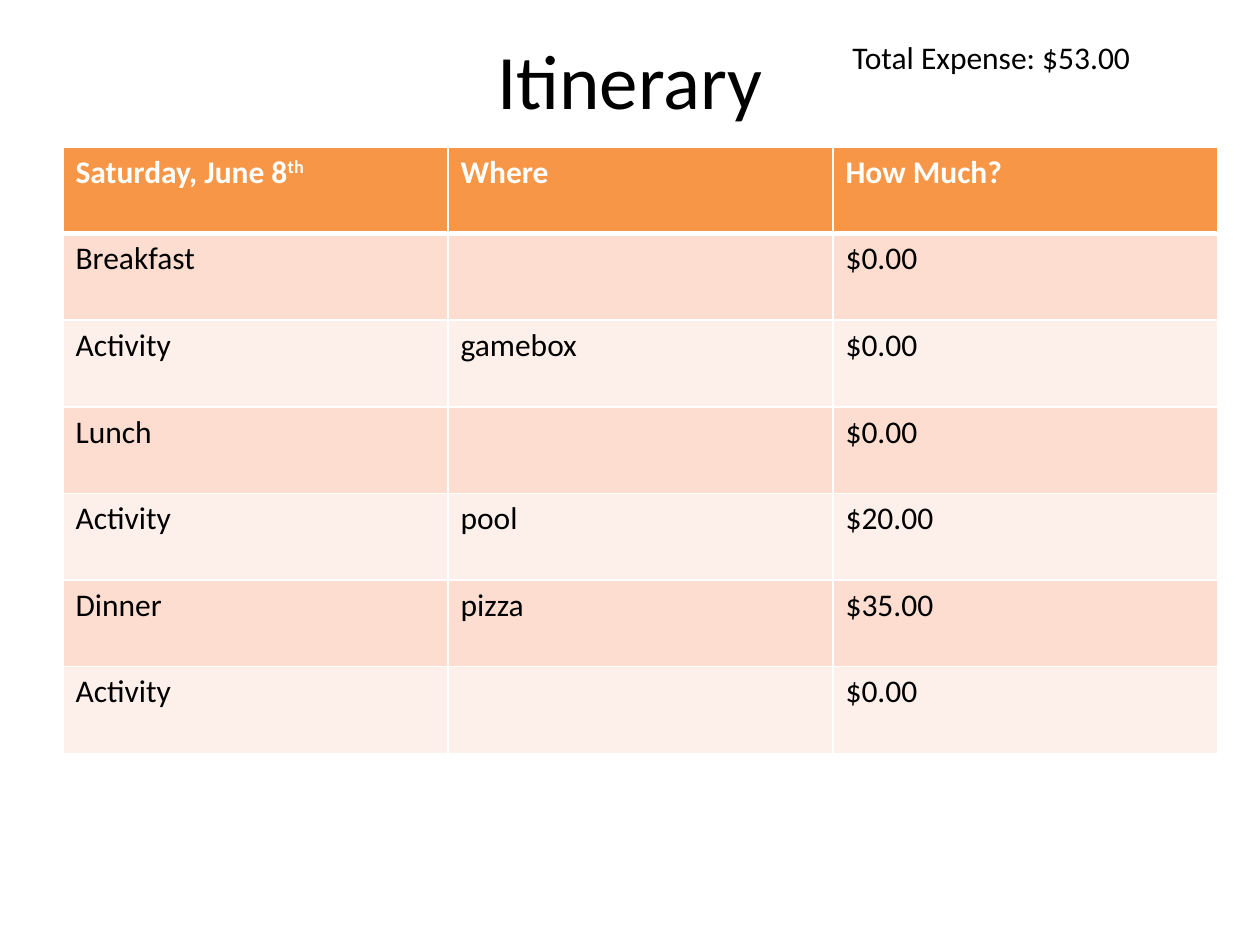
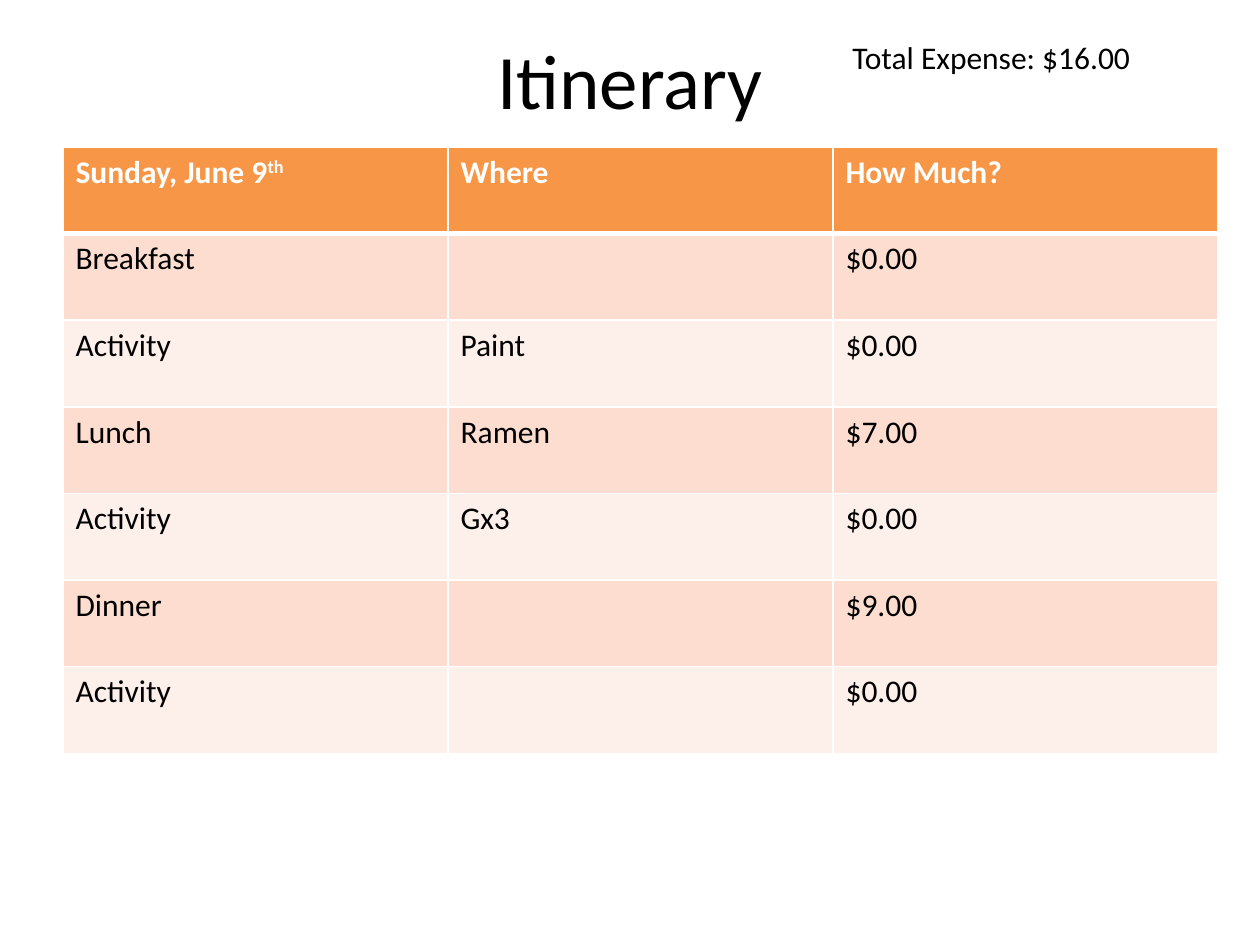
import pptx
import pptx.dml.color
import pptx.enum.text
import pptx.oxml
import pptx.oxml.ns
import pptx.util

SCALE = 6350
ALIGN = pptx.enum.text.PP_ALIGN
ANCHOR = pptx.enum.text.MSO_ANCHOR

DAYS = [
    ("Saturday, June 8", "$53.00", [
        ("Breakfast", "", "$0.00"),
        ("Activity", "gamebox", "$0.00"),
        ("Lunch", "", "$0.00"),
        ("Activity", "pool", "$20.00"),
        ("Dinner", "pizza", "$35.00"),
        ("Activity", "", "$0.00"),
    ]),
    ("Sunday, June 9", "$16.00", [
        ("Breakfast", "", "$0.00"),
        ("Activity", "Paint", "$0.00"),
        ("Lunch", "Ramen", "$7.00"),
        ("Activity", "Gx3", "$0.00"),
        ("Dinner", "", "$9.00"),
        ("Activity", "", "$0.00"),
    ]),
]


def px(*nums):
    return [pptx.util.Emu(num * SCALE) for num in nums]


def color(code):
    return pptx.dml.color.RGBColor.from_string(code)


class Deck:
    font = "Calibri"
    ink = "000000"
    paper = "FFFFFF"
    head = "F79646"
    bands = ("FCDDCF", "FDEFE9")

    def __init__(self):
        self.prs = pptx.Presentation()
        self.prs.slide_width, self.prs.slide_height = px(1440, 1080)
        self.slide = None

    def page(self):
        self.slide = self.prs.slides.add_slide(self.prs.slide_layouts[6])
        fill = self.slide.background.fill
        fill.solid()
        fill.fore_color.rgb = color(self.paper)

    def run(self, para, text, size=18, tint=ink, bold=False, base=0):
        run = para.add_run()
        run.text = text
        run.font.name = self.font
        run.font.size = pptx.util.Pt(size)
        run.font.bold = bold
        run.font.color.rgb = color(tint)
        if base:
            run._r.get_or_add_rPr().set("baseline", str(base * 1000))

    def text(self, box, text, size=18, align=ALIGN.LEFT, anchor=ANCHOR.TOP):
        frame = self.slide.shapes.add_textbox(*px(*box)).text_frame
        frame.word_wrap = True
        frame.vertical_anchor = anchor
        para = frame.paragraphs[0]
        para.alignment = align
        self.run(para, text, size)

    def border(self, cell, top, bottom):
        props = cell._tc.get_or_add_tcPr()
        for side, width in zip("LRTB", (1, 1, top, bottom)):
            props.append(pptx.oxml.parse_xml(
                f'<a:ln{side} {pptx.oxml.ns.nsdecls("a")} w="{width * 12700}">'
                f'<a:solidFill><a:srgbClr val="{self.paper}"/></a:solidFill>'
                f'</a:ln{side}>'))

    def cell(self, cell, row, runs):
        self.border(cell, 3 if row == 1 else 1, 3 if row == 0 else 1)
        cell.fill.solid()
        fill = self.bands[(row - 1) % 2] if row else self.head
        cell.fill.fore_color.rgb = color(fill)
        tint = self.ink if row else self.paper
        for text, base in runs:
            self.run(cell.text_frame.paragraphs[0], text, tint=tint,
                     bold=row == 0, base=base)

    def table(self, left, top, wide, high, rows):
        count, cols = len(rows), len(rows[0])
        box = px(left, top, wide * cols, high * count)
        table = self.slide.shapes.add_table(count, cols, *box).table
        table.horz_banding = False
        for row, items in enumerate(rows):
            for col, runs in enumerate(items):
                self.cell(table.cell(row, col), row, runs)

    def plan(self, day, total, rows):
        self.page()
        self.text((72, 0, 1296, 180), "Itinerary", 44,
                  ALIGN.CENTER, ANCHOR.MIDDLE)
        self.text((960, 36, 444, 58), f"Total Expense: {total}")
        head = [[(day, 0), ("th", 30)], [("Where", 0)], [("How Much?", 0)]]
        body = [[[(item, 0)] if item else [] for item in row] for row in rows]
        self.table(72, 168, 440, 99, [head] + body)


def main():
    deck = Deck()
    for day in DAYS:
        deck.plan(*day)
    deck.prs.save("out.pptx")


if __name__ == "__main__":
    main()
